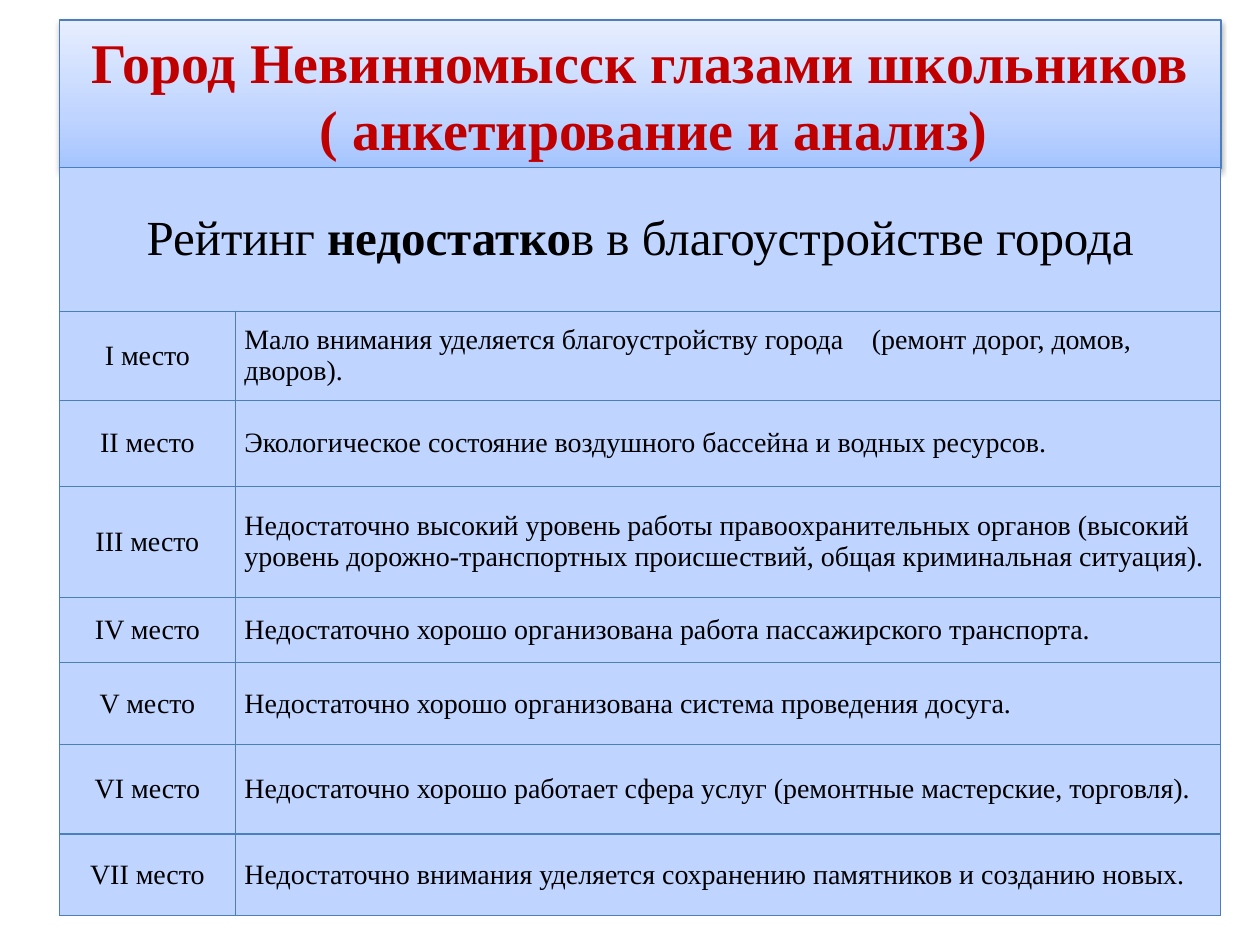
from typing import NamedTuple

from lxml import etree
from pptx import Presentation
from pptx.dml.color import RGBColor
from pptx.enum.shapes import MSO_SHAPE
from pptx.enum.text import MSO_ANCHOR, PP_ALIGN
from pptx.oxml import parse_xml
from pptx.oxml.ns import qn
from pptx.util import Inches, Pt

RECT = MSO_SHAPE.RECTANGLE
MIDDLE = MSO_ANCHOR.MIDDLE
CENTER, LEFT = PP_ALIGN.CENTER, PP_ALIGN.LEFT
FONT = "Times New Roman"
NS = 'xmlns:a="http://schemas.openxmlformats.org/drawingml/2006/main"'
COLORS = {
    "title": "C00000", "text": "000000", "line": "4B7EBC", "cell": "BFD4FF",
    "bottom": "A4C4FF", "top": "E6EEFF",
}


class Place(NamedTuple):
    rank: str
    problem: str
    height: float


PLACES = [
    Place("I", "Мало внимания уделяется благоустройству города\t(ремонт дорог, домов, дворов).", 0.71),
    Place("II", "Экологическое состояние воздушного бассейна и водных ресурсов.", 0.68),
    Place("III", "Недостаточно высокий уровень работы правоохранительных органов (высокий "
          "уровень дорожно-транспортных происшествий, общая криминальная ситуация).", 0.88),
    Place("IV", "Недостаточно хорошо организована работа пассажирского транспорта.", 0.52),
    Place("V", "Недостаточно хорошо организована система проведения досуга.", 0.65),
    Place("VI", "Недостаточно хорошо работает сфера услуг (ремонтные мастерские, торговля).", 0.71),
    Place("VII", "Недостаточно внимания уделяется сохранению памятников и созданию новых.", 0.65),
]
HEADING = [("Рейтинг ", False), ("недостатко", True), ("в в благоустройстве города", False)]
HEADING_HEIGHT = 1.14
COLUMNS = [1.4, 7.82]
X, WIDTH = 0.47, sum(COLUMNS)


def rgb(name: str) -> RGBColor:
    return RGBColor.from_string(COLORS[name])


def style_font(p, size: int, color: str) -> None:
    p.font.name = FONT
    p.font.size = Pt(size)
    p.font.color.rgb = rgb(color)


def add_title(s) -> None:
    sp = s.shapes.add_shape(RECT, Inches(X), Inches(0.16), Inches(WIDTH), Inches(1.18))
    sp.line.color.rgb = rgb("line")
    sp.line.width = Pt(0.75)

    # Vertical three-stop gradient and soft shadow
    stops = "".join(
        f'<a:gs pos="{pos * 1000}"><a:srgbClr val="{COLORS[name]}"/></a:gs>'
        for pos, name in [(0, "bottom"), (35, "cell"), (100, "top")])
    spPr = sp._element.spPr
    spPr.find(qn("a:prstGeom")).addnext(parse_xml(
        f'<a:gradFill {NS} rotWithShape="1"><a:gsLst>{stops}</a:gsLst>'
        '<a:lin ang="16200000" scaled="1"/></a:gradFill>'))
    spPr.find(qn("a:ln")).addnext(parse_xml(
        f'<a:effectLst {NS}><a:outerShdw blurRad="{Pt(3.1)}" dist="{Pt(1.6)}" '
        'dir="5400000" rotWithShape="0"><a:srgbClr val="000000">'
        '<a:alpha val="38000"/></a:srgbClr></a:outerShdw></a:effectLst>'))

    tf = sp.text_frame
    tf.word_wrap = True
    tf.vertical_anchor = MIDDLE
    tf.text = "Город Невинномысск глазами школьников\n( анкетирование и анализ)"
    for p in tf.paragraphs:
        p.alignment = CENTER
        style_font(p, 32, "title")
        p.font.bold = True
    tf.paragraphs[1]._p.get_or_add_pPr().set("marL", str(Inches(0.22)))


def add_borders(cell) -> None:
    tcPr = cell._tc.get_or_add_tcPr()
    for i, side in enumerate(("lnL", "lnR", "lnT", "lnB")):
        tcPr.insert(i, parse_xml(
            f'<a:{side} {NS} w="{Pt(0.75)}"><a:solidFill>'
            f'<a:srgbClr val="{COLORS["line"]}"/></a:solidFill></a:{side}>'))


def fill_cell(cell, runs: list[tuple[str, bool]], size: int, align) -> None:
    cell.vertical_anchor = MIDDLE
    cell.margin_left = cell.margin_right = Inches(0.07)
    cell.margin_top = cell.margin_bottom = 0
    p = cell.text_frame.paragraphs[0]
    p.alignment = align
    p.space_after = Pt(5)
    if any("\t" in text for text, _ in runs):
        tabs = etree.SubElement(p._p.get_or_add_pPr(), qn("a:tabLst"))
        etree.SubElement(tabs, qn("a:tab"), pos=str(Inches(4.98)), algn="l")
    style_font(p, size, "text")
    for text, bold in runs:
        r = p.add_run()
        r.text = text
        r.font.bold = bold


def add_rating(s) -> None:
    heights = [HEADING_HEIGHT] + [place.height for place in PLACES]
    table = s.shapes.add_table(len(heights), len(COLUMNS), Inches(X), Inches(1.33),
                               Inches(WIDTH), Inches(sum(heights))).table
    table.first_row = table.horz_banding = False
    for col, width in zip(table.columns, COLUMNS):
        col.width = Inches(width)
    for row, height in zip(table.rows, heights):
        row.height = Inches(height)
    for cell in table.iter_cells():
        cell.fill.solid()
        cell.fill.fore_color.rgb = rgb("cell")
        add_borders(cell)

    # Heading across both columns, then one row per place
    table.cell(0, 0).merge(table.cell(0, 1))
    fill_cell(table.cell(0, 0), HEADING, 28, CENTER)
    for i, place in enumerate(PLACES, start=1):
        fill_cell(table.cell(i, 0), [(f"{place.rank} место", False)], 16, CENTER)
        fill_cell(table.cell(i, 1), [(place.problem, False)], 16, LEFT)


def main() -> None:
    prs = Presentation()
    prs.slide_width, prs.slide_height = Inches(10), Inches(7.5)
    s = prs.slides.add_slide(prs.slide_layouts[6])
    add_title(s)
    add_rating(s)
    prs.save("out.pptx")


if __name__ == "__main__":
    main()
